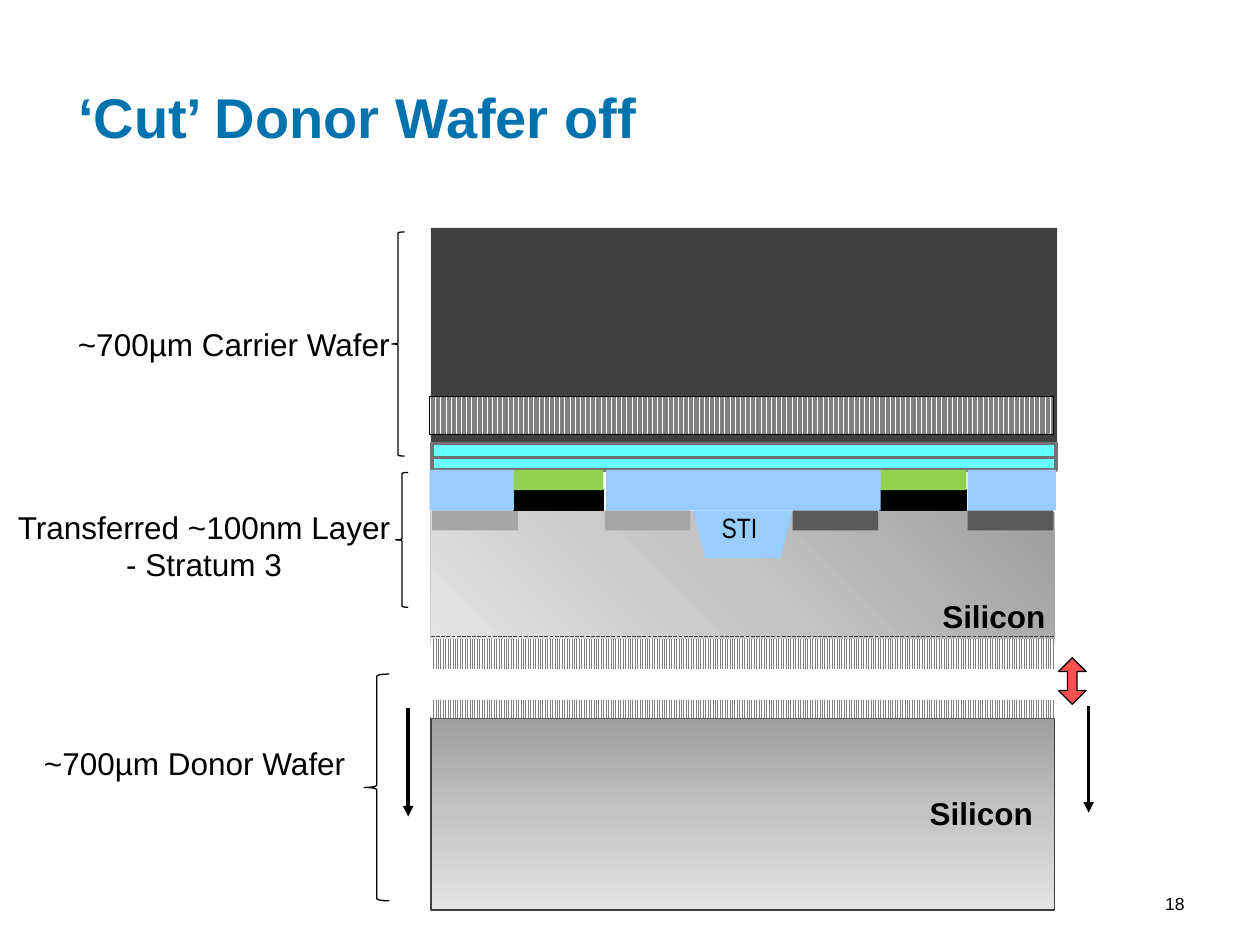
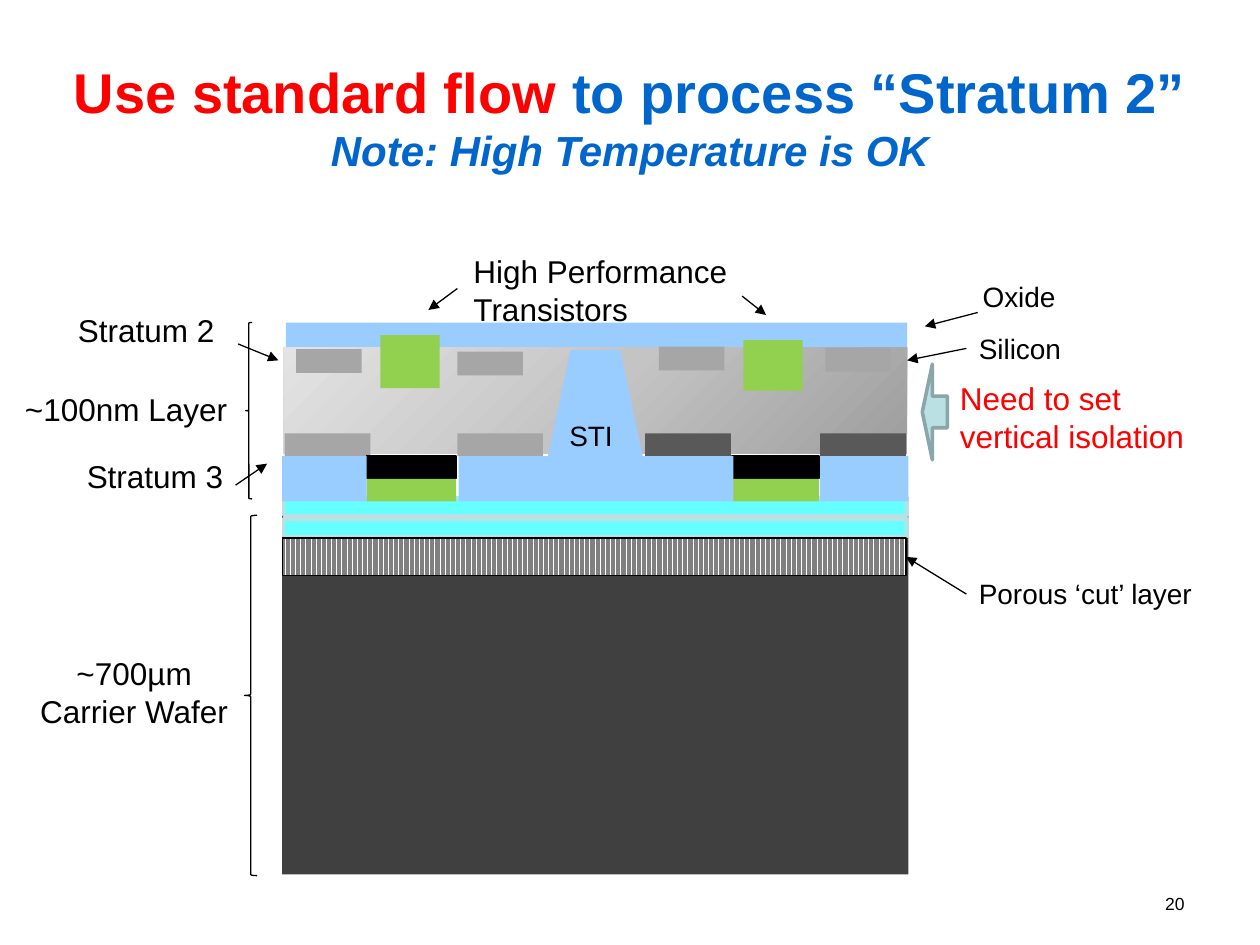
from pptx import Presentation
from pptx.util import Inches, Pt
from pptx.dml.color import RGBColor
from pptx.enum.dml import MSO_LINE, MSO_PATTERN
from pptx.enum.shapes import MSO_CONNECTOR, MSO_SHAPE
from pptx.enum.text import MSO_ANCHOR, MSO_AUTO_SIZE, PP_ALIGN
from pptx.oxml.ns import qn
from lxml.etree import SubElement
from copy import deepcopy

# Colours
BLACK = RGBColor(0x00, 0x00, 0x00)
WHITE = RGBColor(0xFF, 0xFF, 0xFF)
RED = RGBColor(0xFF, 0x00, 0x00)
TITLE_TEAL = RGBColor(0x00, 0x73, 0xAE)
TITLE_BLUE = RGBColor(0x00, 0x66, 0xCC)
CARRIER = RGBColor(0x40, 0x40, 0x40)
OXIDE = RGBColor(0x99, 0xCC, 0xFF)
BOND = RGBColor(0x66, 0xFF, 0xFF)
BOND_EDGE = RGBColor(0x73, 0x73, 0x73)
PALE_TEAL = RGBColor(0xBB, 0xE0, 0xE3)
TEAL_EDGE = RGBColor(0x8A, 0xA6, 0xA8)
GATE = RGBColor(0x92, 0xD0, 0x50)
LIGHT_CONTACT = RGBColor(0xA6, 0xA6, 0xA6)
DARK_CONTACT = RGBColor(0x59, 0x59, 0x59)
PORE = RGBColor(0x80, 0x80, 0x80)
CUT_RED = RGBColor(0xFF, 0x50, 0x50)
SILICON = (RGBColor(0x9E, 0x9E, 0x9E), RGBColor(0xC4, 0xC4, 0xC4), RGBColor(0xE3, 0xE3, 0xE3))

FONT = "Arial"
SLIDE_WIDTH, SLIDE_HEIGHT = 10, 7.5
WAFER_WIDTH = 4.95
LIGHT_PORES, DARK_PORES = MSO_PATTERN.LIGHT_VERTICAL, MSO_PATTERN.DARK_VERTICAL

# Device layer columns: (offset from the wafer's left edge, width, colour)
CONTACTS = [(0.02, 0.68, LIGHT_CONTACT), (1.39, 0.68, LIGHT_CONTACT),
            (2.88, 0.68, DARK_CONTACT), (4.27, 0.68, DARK_CONTACT)]
GATES = [(0.67, 0.71), (3.57, 0.69)]
OXIDES = [(0, 0.67), (1.4, 2.18), (4.27, 0.7)]

# Slide "Cut": text, box, format
CUT_LABELS = [
    ("~700µm Donor Wafer", (0.25, 5.86, 2.69, 0.4), dict(wrap=False)),
    ("~700µm Carrier Wafer", (0.52, 2.53, 2.7, 0.4), dict(wrap=False)),
    ("Transferred ~100nm Layer\n- Stratum 3", (0, 3.98, 3.24, 0.7), dict(align=PP_ALIGN.CENTER)),
    ("Silicon", (7.28, 6.25, 1.11, 0.4), dict(bold=True)),
    ("Silicon", (7.38, 4.69, 1.11, 0.4), dict(bold=True)),
    ("STI", (5.63, 4, 0.63, 0.37), dict(size=16, font="Arial Narrow")),
]
CUT_BRACES = [(2.89, 5.35, 0.2, 1.8), (3.11, 1.84, 0.1, 1.78), (3.14, 3.75, 0.1, 1.07)]
CUT_ARROWS = [((8.64, 5.6), (8.64, 6.45)), ((3.24, 5.62), (3.24, 6.48))]

# Slide "Stratum 2"
STRATUM_TITLE = [
    [("Use standard flow", dict(color=RED)), (" to process “Stratum 2”", {})],
    [("Note: High Temperature is OK", dict(size=24, italic=True))],
]
STRATUM_LABELS = [
    ("~100nm Layer", (-0.46, 3.05, 2.92, 0.4), dict(align=PP_ALIGN.CENTER)),
    ("~700µm\nCarrier Wafer", (0.18, 5.14, 1.77, 0.7), dict(align=PP_ALIGN.CENTER, wrap=False)),
    ("Silicon", (7.67, 2.58, 1.01, 0.37), dict(size=16)),
    ("Porous ‘cut’ layer", (7.67, 4.53, 2.18, 0.37), dict(size=16)),
    ("STI", (4.42, 3.27, 0.69, 0.37), dict(size=16)),
    ("High Performance Transistors", (3.66, 1.95, 2.53, 0.7), {}),
    ("Oxide", (7.7, 2.17, 0.78, 0.37), dict(size=16, wrap=False)),
    ("Stratum 2", (0.52, 2.42, 1.35, 0.4), dict(wrap=False)),
    ("Stratum 3", (0.59, 3.58, 1.28, 0.4), dict(wrap=False)),
    ("Need to set\nvertical isolation", (7.52, 2.96, 2.01, 0.71), dict(color=RED, wrap=False)),
]
STRATUM_BRACES = [(1.94, 4.09, 0.1, 2.86), (1.95, 2.56, 0.05, 1.4)]
STRATUM_ARROWS = [
    ((3.63, 2.29), (3.4, 2.46)), ((5.89, 2.35), (6.08, 2.5)), ((7.76, 2.48), (7.34, 2.59)),
    ((1.89, 2.73), (2.21, 2.86)), ((1.87, 3.85), (2.12, 3.68)),
]
TOP_GATES = [(3.02, 2.66, 0.47, 0.42), (5.9, 2.7, 0.47, 0.4)]
TOP_CONTACTS = [(2.35, 2.77), (3.63, 2.79), (5.23, 2.75), (6.55, 2.76)]


def write(frame, text, size=18, font=FONT, color=BLACK, bold=False, italic=False,
          align=PP_ALIGN.LEFT, anchor=MSO_ANCHOR.TOP, wrap=True):
    """Fill a text frame with lines of text, or with lists of (text, format) spans."""
    frame.auto_size = MSO_AUTO_SIZE.NONE
    frame.word_wrap = wrap
    frame.vertical_anchor = anchor
    lines = [[(line, {})] for line in text.split("\n")] if isinstance(text, str) else text
    for number, line in enumerate(lines):
        para = frame.add_paragraph() if number else frame.paragraphs[0]
        para.alignment = align
        para.space_before = Pt(0)
        for words, changes in line:
            look = dict(size=size, color=color, italic=italic) | changes
            span = para.add_run()
            span.text = words
            span.font.name, span.font.bold = font, bold
            span.font.size, span.font.italic = Pt(look["size"]), look["italic"]
            span.font.color.rgb = look["color"]


def add_label(page, text, place, look):
    box = page.shapes.add_textbox(*map(Inches, place))
    write(box.text_frame, text, **look)
    return box


def add_part(page, place, fill=None, edge=None, weight=0.75, kind=MSO_SHAPE.RECTANGLE, adjust=()):
    part = page.shapes.add_shape(kind, *map(Inches, place))
    part.shadow.inherit = False
    for number, value in enumerate(adjust):
        part.adjustments[number] = value
    if fill is None:
        part.fill.background()
    else:
        part.fill.solid()
        part.fill.fore_color.rgb = fill
    if edge is None:
        part.line.fill.background()
    else:
        part.line.color.rgb = edge
        part.line.width = Pt(weight)
    return part


def add_silicon(page, place, angle, **look):
    """Shaded silicon; the angle runs counter-clockwise from dark to light."""
    part = add_part(page, place, **look)
    part.fill.gradient()
    part.fill.gradient_angle = angle
    stops = part.element.spPr.find(qn("a:gradFill")).find(qn("a:gsLst"))
    stops.insert(1, deepcopy(stops[0]))
    for number, (stop, color) in enumerate(zip(part.fill.gradient_stops, SILICON)):
        stop.position = number / 2
        stop.color.rgb = color


def add_pores(page, place, pattern, **look):
    part = add_part(page, place, **look)
    part.fill.patterned()
    part.fill.pattern = pattern
    part.fill.fore_color.rgb = PORE
    part.fill.back_color.rgb = WHITE
    return part


def add_line(page, start, end, color=BLACK, weight=0.75, arrow=True):
    line = page.shapes.add_connector(MSO_CONNECTOR.STRAIGHT, *map(Inches, start + end))
    line.line.color.rgb = color
    line.line.width = Pt(weight)
    if arrow:
        SubElement(line.get_or_add_ln(), qn("a:tailEnd"), type="triangle")
    SubElement(line.element.spPr, qn("a:effectLst"))
    return line


def add_device_layer(page, left, top, row, flipped=False):
    """Three rows: gate, gate insulator, contacts; upside down when flipped."""
    gate, insulator, contact = [top + row * step for step in ((2, 1, 0) if flipped else (0, 1, 2))]
    for offset, width, color in CONTACTS:
        add_part(page, (left + offset, contact, width, row), color)
    for offset, width in GATES:
        add_part(page, (left + offset, insulator, width, row), BLACK, BLACK)
        add_part(page, (left + offset, gate, width, row), GATE)
    for offset, width in OXIDES:
        add_part(page, (left + offset, min(gate, insulator), width, 2 * row), OXIDE)


def add_bonds(page, left, tops, height, edge):
    for top in tops:
        add_part(page, (left, top, WAFER_WIDTH, height), BOND, edge, 2)


def add_braces(page, braces, **look):
    for place in braces:
        add_part(page, place, edge=BLACK, kind=MSO_SHAPE.LEFT_BRACE, **look)


def start_page(deck, title, place, number, **look):
    page = deck.slides.add_slide(deck.slide_layouts[5])
    heading = page.shapes.title
    heading.left, heading.top, heading.width, heading.height = map(Inches, place)
    write(heading.text_frame, title, size=32, bold=True, anchor=MSO_ANCHOR.MIDDLE, **look)
    add_label(page, number, (8.39, 7.04, 1.11, 0.33), dict(size=10, align=PP_ALIGN.RIGHT))
    return page


def build_cut(deck):
    page = start_page(deck, "‘Cut’ Donor Wafer off", (0.52, 0.3, 9.48, 1.25), "18", color=TITLE_TEAL)
    left = 3.42
    # Transferred silicon with its trench
    add_silicon(page, (left, 4.06, WAFER_WIDTH, 1.05), 225)
    trench = add_part(page, (5.5, 4.05, 0.79, 0.38), OXIDE, kind=MSO_SHAPE.TRAPEZOID)
    trench.rotation = 180
    cut = add_line(page, (left, 5.05), (left + WAFER_WIDTH, 5.05), CARRIER, arrow=False)
    cut.line.dash_style = MSO_LINE.SQUARE_DOT
    # Carrier, bond and devices
    add_part(page, (left, 1.81, 4.97, 1.8), CARRIER)
    add_bonds(page, left + 0.01, (3.62, 3.52), 0.11, BOND_EDGE)
    add_device_layer(page, left - 0.01, 3.73, 0.16)
    # Donor wafer and porous layers
    add_silicon(page, (left, 5.7, WAFER_WIDTH, 1.52), 270, edge=CARRIER, weight=1)
    for top, height in ((5.56, 0.14), (5.07, 0.24)):
        add_pores(page, (left, top, WAFER_WIDTH, height), LIGHT_PORES)
    add_pores(page, (left - 0.01, 3.15, WAFER_WIDTH, 0.3), DARK_PORES, edge=BLACK)
    # Annotations
    add_braces(page, CUT_BRACES)
    for start, end in CUT_ARROWS:
        add_line(page, start, end, weight=2)
    add_part(page, (8.4, 5.22, 0.22, 0.37), CUT_RED, BLACK, kind=MSO_SHAPE.UP_DOWN_ARROW,
             adjust=(0.5, 0.34))
    for label in CUT_LABELS:
        add_label(page, *label)


def build_stratum(deck):
    page = start_page(deck, STRATUM_TITLE, (0, 0.3, SLIDE_WIDTH, 1.25), "20",
                      color=TITLE_BLUE, align=PP_ALIGN.CENTER)
    left = 2.24
    # Carrier, new silicon with its trench, bond and devices
    add_part(page, (left, 4.03, 4.97, 2.91), CARRIER)
    add_part(page, (left + 0.03, 2.56, 4.93, 0.35), OXIDE)
    add_silicon(page, (left + 0.01, 2.76, WAFER_WIDTH, 0.84), 135)
    add_part(page, (4.33, 2.78, 0.79, 0.93), OXIDE, kind=MSO_SHAPE.TRAPEZOID)
    add_bonds(page, left + 0.01, (3.95, 4.12), 0.14, PALE_TEAL)
    add_device_layer(page, left, 3.44, 0.18, flipped=True)
    for place in TOP_GATES:
        add_part(page, place, GATE)
    for place in TOP_CONTACTS:
        add_part(page, place + (0.52, 0.19), LIGHT_CONTACT)
    porous = add_pores(page, (left, 4.27, WAFER_WIDTH, 0.3), DARK_PORES, edge=BLACK)
    # Annotations
    add_braces(page, STRATUM_BRACES, adjust=(0.09, 0.5))
    add_part(page, (7.32, 2.89, 0.2, 0.76), PALE_TEAL, TEAL_EDGE, 2, MSO_SHAPE.LEFT_ARROW, (0.33, 0.4))
    labels = {label[0]: add_label(page, *label) for label in STRATUM_LABELS}
    for start, end in STRATUM_ARROWS:
        add_line(page, start, end)
    silicon_arrow = add_line(page, (7.67, 2.77), (7.2, 2.86))
    silicon_arrow.begin_connect(labels["Silicon"], 1)
    porous_arrow = add_line(page, (7.66, 4.67), (7.19, 4.42))
    porous_arrow.begin_connect(labels["Porous ‘cut’ layer"], 1)
    porous_arrow.end_connect(porous, 3)


def main():
    deck = Presentation()
    deck.slide_width, deck.slide_height = Inches(SLIDE_WIDTH), Inches(SLIDE_HEIGHT)
    build_cut(deck)
    build_stratum(deck)
    deck.save("out.pptx")


if __name__ == "__main__":
    main()
